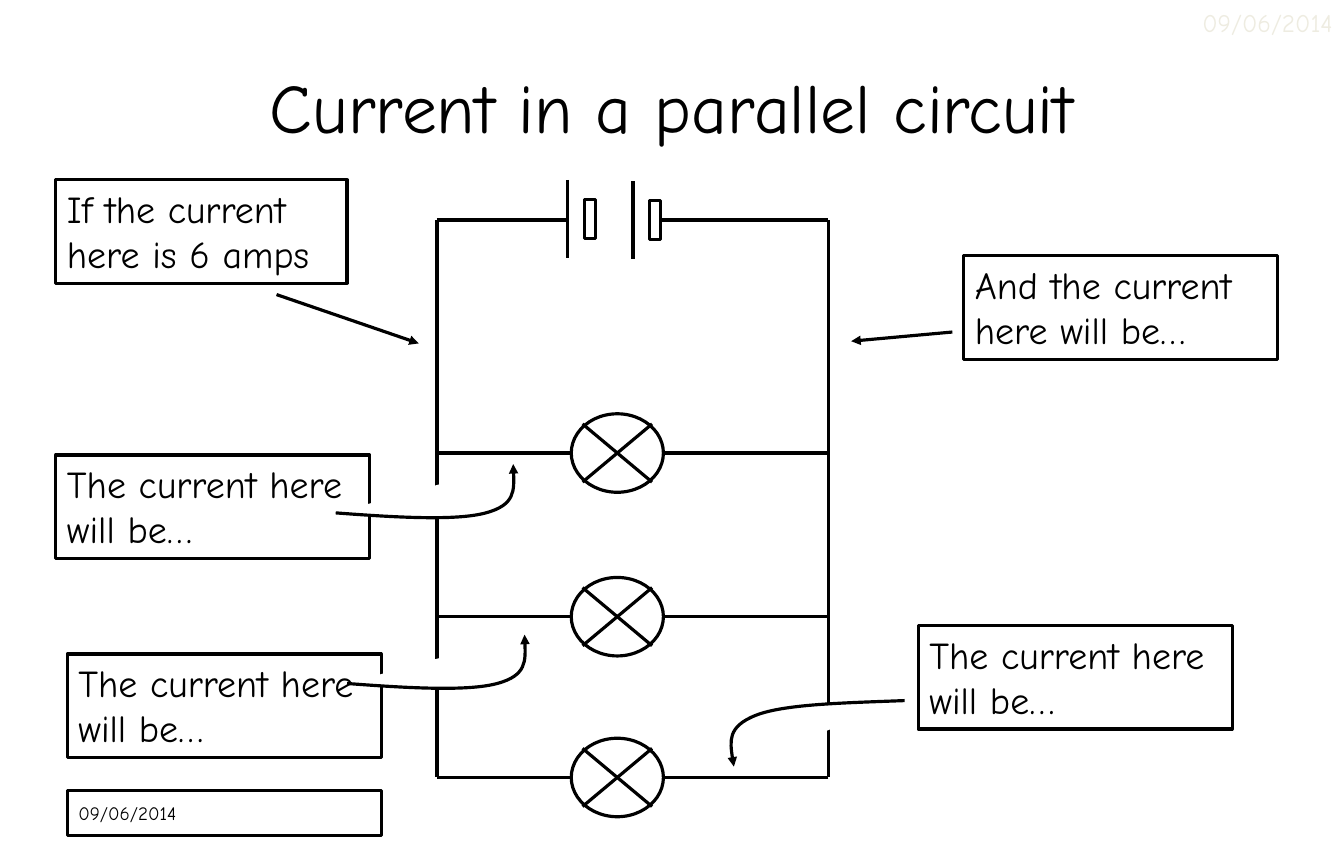
from pptx import Presentation
from pptx.dml.color import RGBColor
from pptx.enum.shapes import MSO_CONNECTOR, MSO_SHAPE
from pptx.enum.text import MSO_ANCHOR, PP_ALIGN
from pptx.oxml.ns import qn
from pptx.util import Pt
from lxml import etree

STRAIGHT = MSO_CONNECTOR.STRAIGHT
RECT, OVAL = MSO_SHAPE.RECTANGLE, MSO_SHAPE.OVAL
TOP, MIDDLE = MSO_ANCHOR.TOP, MSO_ANCHOR.MIDDLE
LEFT, CENTER, RIGHT = PP_ALIGN.LEFT, PP_ALIGN.CENTER, PP_ALIGN.RIGHT

FONT = "Comic Neue"
COLORS = {"ink": "000000", "paper": "FFFFFF", "pale": "EEECE1"}
DATE = "09/06/2014"
TITLE = "Current in a parallel circuit"
ASK = "The current here will be…"

BEND = [(212.4, 324.7), (250.6, 327.6), (288.7, 329.8), (307.4, 324.7),
        (326.2, 319.7), (325.4, 306.7), (324.7, 293.8)]
BACK = [(572.4, 443.5), (534.2, 445), (496.1, 445.7), (478.1, 452.9),
        (460.1, 460.1), (462.2, 473), (464.4, 485.3)]
LOWER = [(x + 7.2, y + 108) for x, y in BEND]

NOTES = [
    ("If the current here is 6 amps", 35.3, 113.8, 184.3, [(175, 186.5), (265, 217.4)]),
    (ASK, 35.3, 288, 198.7, BEND),
    (ASK, 42.5, 414, 198.7, LOWER),
    (ASK, 581, 396, 198.7, BACK),
    ("And the current here will be…", 609.8, 162, 198.7, [(602.6, 210.2), (538.6, 216)]),
]
NOTE_H = 65.5

WEST, EAST, NORTH = 276.5, 524.2, 139.3
ROWS = [286.8, 390.4, 492.2]
LAMP_X, LAMP_W, LAMP_H = 390.6, 58.3, 49.7
CROSS_X, CROSS_Y = 22, 18.4
CELL_X, CELL_Y, CELL_GAP = 359.3, 138.6, 41.2
BAR_H, PLATE_W, PLATE_H, PLATE_DX = 49.3, 7.2, 24.5, 10.4

deck = Presentation()
deck.slide_width, deck.slide_height = Pt(850.4), Pt(540)
slide = deck.slides.add_slide(deck.slide_layouts[6])
shapes = slide.shapes


def color(name):
    return RGBColor.from_string(COLORS[name])


def ink(shape, arrow=False):
    shape.line.color.rgb = color("ink")
    shape.line.width = Pt(2)
    if arrow:
        etree.SubElement(shape.line._get_or_add_ln(), qn("a:tailEnd"), type="triangle")


def paint(shape):
    shape.shadow.inherit = False
    shape.fill.solid()
    shape.fill.fore_color.rgb = color("paper")


def wire(x1, y1, x2, y2, arrow=False):
    line = shapes.add_connector(STRAIGHT, Pt(x1), Pt(y1), Pt(x2), Pt(y2))
    ink(line, arrow)
    etree.SubElement(line._element.spPr, qn("a:effectLst"))
    return line


def block(kind, x, y, w, h):
    shape = shapes.add_shape(kind, Pt(x), Pt(y), Pt(w), Pt(h))
    paint(shape)
    ink(shape)
    return shape


def write(shape, text, size, align=LEFT, anchor=TOP, tone="ink"):
    frame = shape.text_frame
    frame.word_wrap = True
    frame.vertical_anchor = anchor
    para = frame.paragraphs[0]
    para.alignment = align
    run = para.add_run()
    run.text = text
    run.font.name = FONT
    run.font.size = Pt(size)
    run.font.color.rgb = color(tone)


def label(x, y, w, h, *style):
    write(shapes.add_textbox(Pt(x), Pt(y), Pt(w), Pt(h)), *style)


def curve(points):
    dots = [(Pt(x), Pt(y)) for x, y in points]
    form = shapes.build_freeform(*dots[0])
    form.add_line_segments(dots[1:], close=False)
    shape = form.convert_to_shape()
    paint(shape)
    ink(shape, True)
    steps = list(shape._element.iter(qn("a:lnTo")))
    for i in range(0, len(steps), 3):
        arc = etree.Element(qn("a:cubicBezTo"))
        steps[i].addprevious(arc)
        for step in steps[i:i + 3]:
            arc.append(step[0])
            step.getparent().remove(step)


def lamp(y):
    block(OVAL, LAMP_X - LAMP_W / 2, y - LAMP_H / 2, LAMP_W, LAMP_H)
    for side in (-1, 1):
        wire(LAMP_X - CROSS_X, y - side * CROSS_Y, LAMP_X + CROSS_X, y + side * CROSS_Y)
    wire(WEST, y, LAMP_X - LAMP_W / 2, y)
    wire(EAST, y, LAMP_X + LAMP_W / 2, y)


def cell(x, y):
    wire(x, y - BAR_H / 2, x, y + BAR_H / 2)
    return block(RECT, x + PLATE_DX, y - PLATE_H / 2, PLATE_W, PLATE_H)


label(700, 0, 150.4, 28, DATE, 16, RIGHT, MIDDLE, "pale")
write(block(RECT, 42.5, 500.4, 198.7, 28.8), DATE, 12, LEFT, MIDDLE)

for x in (WEST, EAST):
    wire(x, NORTH, x, ROWS[-1])
wire(WEST, NORTH, CELL_X, NORTH)
cell(CELL_X, CELL_Y)
plate = cell(CELL_X + CELL_GAP, NORTH)
wire(EAST, NORTH, CELL_X + CELL_GAP + PLATE_DX + PLATE_W, NORTH).end_connect(plate, 3)
for y in ROWS:
    lamp(y)

label(42.5, 21.6, 765.4, 90, TITLE, 44, CENTER, MIDDLE)
for text, x, y, w, track in NOTES:
    write(block(RECT, x, y, w, NOTE_H), text, 24)
    if len(track) == 2:
        wire(*track[0], *track[1], True)
    else:
        curve(track)

deck.save("out.pptx")
